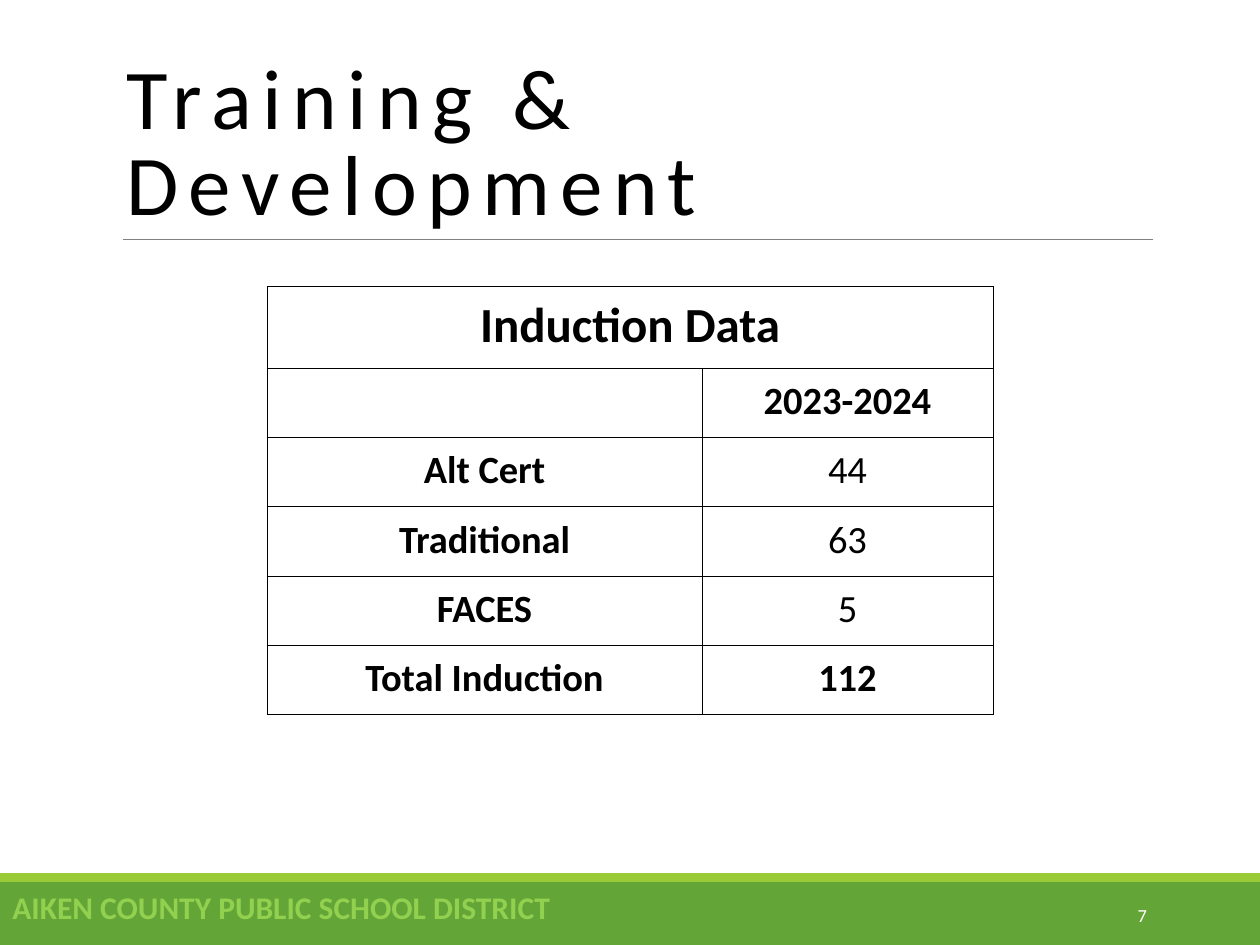
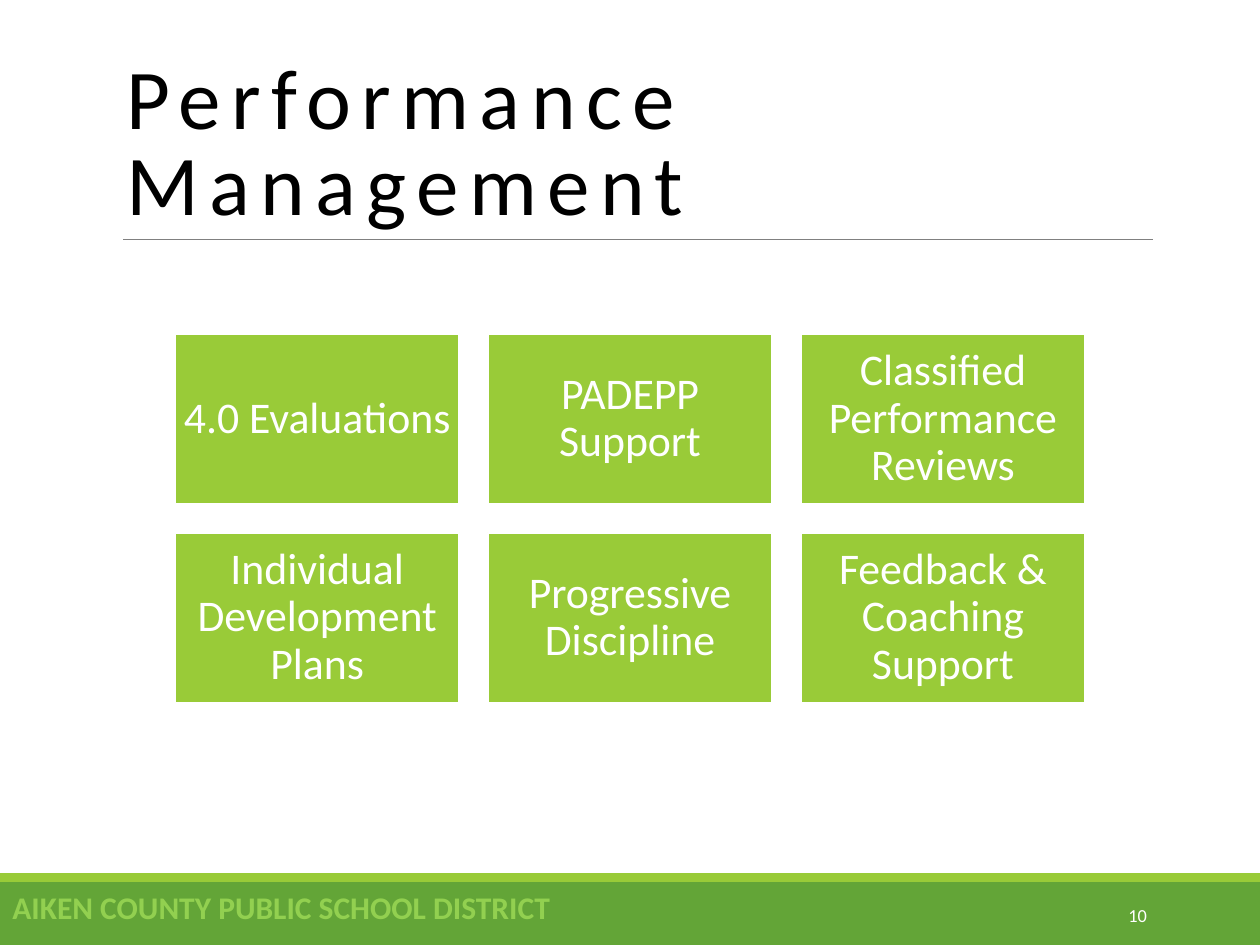
from dataclasses import dataclass
from itertools import product

from lxml.etree import SubElement
from pptx import Presentation
from pptx.dml.color import RGBColor
from pptx.enum.shapes import MSO_CONNECTOR, MSO_SHAPE
from pptx.enum.text import MSO_ANCHOR, PP_ALIGN
from pptx.oxml import parse_xml
from pptx.oxml.ns import nsdecls, qn
from pptx.slide import Slide
from pptx.table import _Cell
from pptx.text.text import TextFrame
from pptx.util import Pt

# Shared look
FONT = "Calibri"
BLACK = RGBColor(0x00, 0x00, 0x00)
WHITE = RGBColor(0xFF, 0xFF, 0xFF)
GRAY = RGBColor(0x80, 0x80, 0x80)
DARK_GREEN = RGBColor(0x63, 0xA5, 0x37)
LIME = RGBColor(0x99, 0xCB, 0x38)
FOOTER_GREEN = RGBColor(0x92, 0xD0, 0x50)
SLIDE_WIDTH, SLIDE_HEIGHT = 720, 540
DISTRICT = "AIKEN COUNTY PUBLIC SCHOOL DISTRICT"


@dataclass(frozen=True)
class Box:
    """Place and size in points."""
    left: float
    top: float
    width: float
    height: float

    def lengths(self) -> tuple[Pt, Pt, Pt, Pt]:
        return Pt(self.left), Pt(self.top), Pt(self.width), Pt(self.height)


@dataclass(frozen=True)
class TextStyle:
    size: float
    color: RGBColor
    bold: bool = False
    align: PP_ALIGN = PP_ALIGN.LEFT
    anchor: MSO_ANCHOR = MSO_ANCHOR.TOP
    line_spacing: float = 1.0
    tracking: float = 0


TITLE = TextStyle(48.6, BLACK, anchor=MSO_ANCHOR.BOTTOM, line_spacing=0.85, tracking=6)
PAGE_NUMBER = TextStyle(10.5, WHITE, align=PP_ALIGN.RIGHT, anchor=MSO_ANCHOR.MIDDLE)
FOOTER = TextStyle(18, FOOTER_GREEN, bold=True)
TOPIC = TextStyle(25, WHITE, align=PP_ALIGN.CENTER, anchor=MSO_ANCHOR.MIDDLE, line_spacing=0.9)
TABLE_TITLE = TextStyle(28, BLACK, bold=True, align=PP_ALIGN.CENTER)
TABLE_LABEL = TextStyle(22, BLACK, bold=True, align=PP_ALIGN.CENTER)
TABLE_VALUE = TextStyle(22, BLACK, align=PP_ALIGN.CENTER)

# Content
INDUCTION_ROWS = [
    ("", "2023-2024"),
    ("Alt Cert", "44"),
    ("Traditional", "63"),
    ("FACES", "5"),
    ("Total Induction", "112"),
]
TOPICS = [
    "4.0 Evaluations", "PADEPP Support", "Classified Performance Reviews",
    "Individual Development Plans", "Progressive Discipline", "Feedback & Coaching Support",
]


def write(frame: TextFrame, text: str, style: TextStyle) -> None:
    paragraph = frame.paragraphs[0]
    paragraph.alignment = style.align
    paragraph.line_spacing = style.line_spacing
    run = paragraph.add_run()
    run.text = text
    font = run.font
    font.name, font.size, font.bold = FONT, Pt(style.size), style.bold
    font.color.rgb = style.color
    if style.tracking:
        run._r.get_or_add_rPr().set("spc", str(style.tracking * 100))


def add_text(slide: Slide, box: Box, text: str, style: TextStyle) -> None:
    frame = slide.shapes.add_textbox(*box.lengths()).text_frame
    frame.word_wrap = True
    frame.vertical_anchor = style.anchor
    write(frame, text, style)


def add_rect(slide: Slide, box: Box, fill: RGBColor):
    rect = slide.shapes.add_shape(MSO_SHAPE.RECTANGLE, *box.lengths())
    rect.shadow.inherit = False
    rect.fill.solid()
    rect.fill.fore_color.rgb = fill
    rect.line.fill.background()
    return rect


def add_base_slide(deck: Presentation, title: str, number: int) -> Slide:
    slide = deck.slides.add_slide(deck.slide_layouts[6])
    # Footer bands
    add_rect(slide, Box(0, 504, SLIDE_WIDTH, 36), DARK_GREEN)
    add_rect(slide, Box(0, 499, SLIDE_WIDTH, 5), LIME)
    # Title and its rule
    rule = slide.shapes.add_connector(
        MSO_CONNECTOR.STRAIGHT, Pt(70.5), Pt(136.8), Pt(658.8), Pt(136.8))
    rule.line.color.rgb = GRAY
    rule.line.width = Pt(0.5)
    SubElement(rule._element.spPr, qn("a:effectLst"))
    add_text(slide, Box(65, 22.3, 594, 114.5), title, TITLE)
    # Page number and district name
    add_text(slide, Box(584.6, 508.5, 77.8, 28.8), str(number), PAGE_NUMBER)
    add_text(slide, Box(0, 504, SLIDE_WIDTH, 29), DISTRICT, FOOTER)
    return slide


def format_cell(cell: _Cell) -> None:
    cell.vertical_anchor = MSO_ANCHOR.BOTTOM
    cell.margin_left = cell.margin_right = cell.margin_top = Pt(0.7)
    cell.margin_bottom = Pt(7.2)
    cell.fill.background()
    properties = cell._tc.get_or_add_tcPr()
    for position, side in enumerate(("lnL", "lnR", "lnT", "lnB")):
        properties.insert(position, parse_xml(
            f'<a:{side} {nsdecls("a")} w="{Pt(0.5)}"><a:solidFill>'
            f'<a:srgbClr val="{BLACK}"/></a:solidFill></a:{side}>'))


def add_induction_table(slide: Slide) -> None:
    box = Box(152.6, 163.9, 414.8, 244.5)
    title_height, row_height = 46.5, 39.6
    table = slide.shapes.add_table(len(INDUCTION_ROWS) + 1, 2, *box.lengths()).table
    table.first_row = table.horz_banding = False
    for column, width in zip(table.columns, (248.6, 166.2)):
        column.width = Pt(width)
    for index, row in enumerate(table.rows):
        row.height = Pt(row_height if index else title_height)
        for cell in row.cells:
            format_cell(cell)

    heading = table.cell(0, 0)
    heading.merge(table.cell(0, 1))
    write(heading.text_frame, "Induction Data", TABLE_TITLE)
    last = len(INDUCTION_ROWS)
    for index, (label, value) in enumerate(INDUCTION_ROWS, start=1):
        if label:
            write(table.cell(index, 0).text_frame, label, TABLE_LABEL)
        value_style = TABLE_LABEL if index in (1, last) else TABLE_VALUE
        write(table.cell(index, 1).text_frame, value, value_style)


def add_topic_grid(slide: Slide) -> None:
    left, top, width, height, gap = 100, 190.8, 162.4, 97.2, 16.4
    for (row, column), topic in zip(product(range(2), range(3)), TOPICS):
        box = Box(left + column * (width + gap), top + row * (height + gap), width, height)
        tile = add_rect(slide, box, LIME)
        tile.line.color.rgb = WHITE
        tile.line.width = Pt(1.25)
        frame = tile.text_frame
        frame.word_wrap = True
        frame.vertical_anchor = TOPIC.anchor
        frame.margin_left = frame.margin_right = Pt(4.8)
        frame.margin_top = frame.margin_bottom = Pt(4.8)
        write(frame, topic, TOPIC)


def main() -> None:
    deck = Presentation()
    deck.slide_width, deck.slide_height = Pt(SLIDE_WIDTH), Pt(SLIDE_HEIGHT)
    add_induction_table(add_base_slide(deck, "Training & Development", 7))
    add_topic_grid(add_base_slide(deck, "Performance Management", 10))
    deck.save("out.pptx")


if __name__ == "__main__":
    main()
